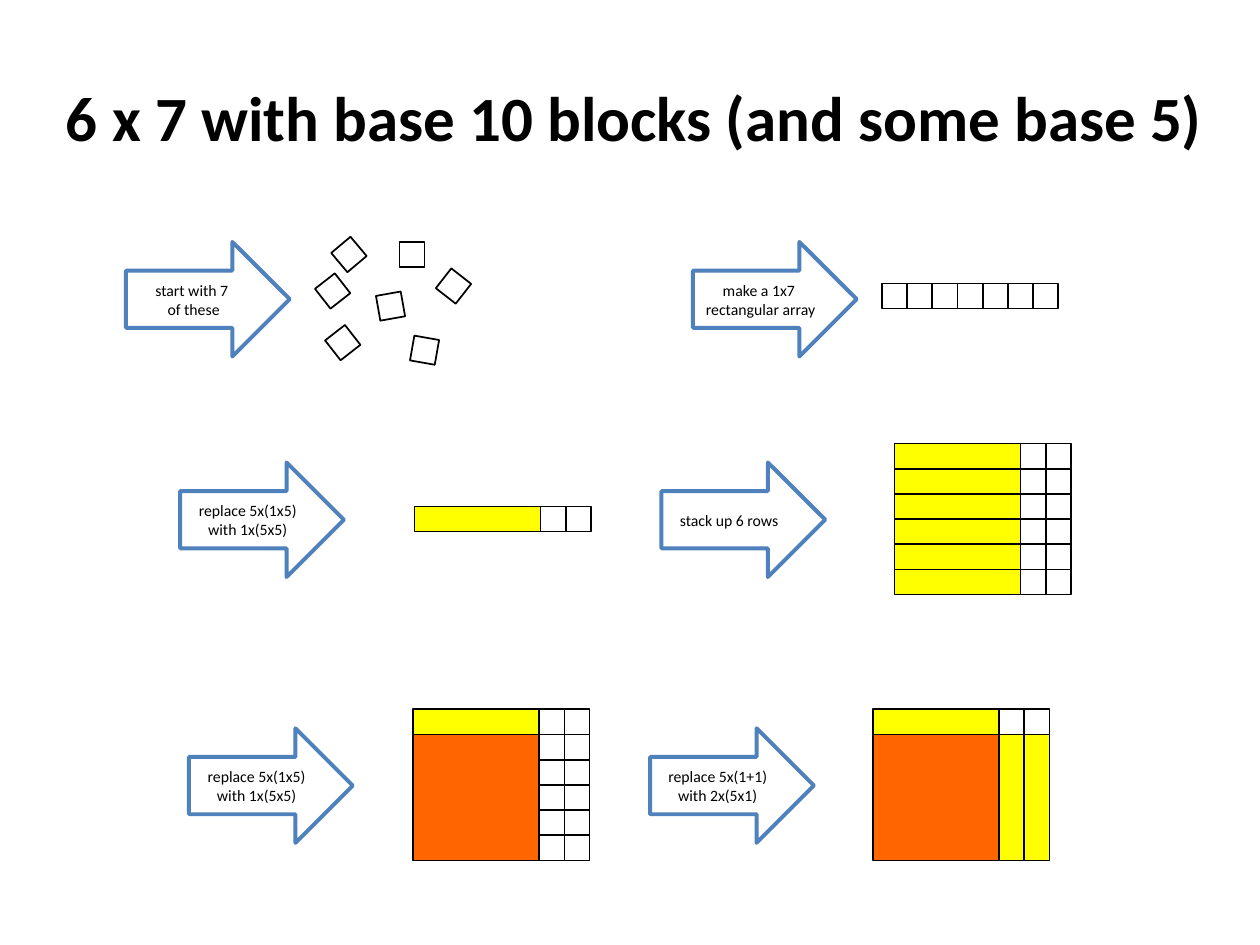
from typing import NamedTuple

from pptx import Presentation
from pptx.dml.color import RGBColor
from pptx.enum.shapes import MSO_SHAPE
from pptx.enum.text import MSO_ANCHOR, PP_ALIGN
from pptx.util import Inches, Pt

RECTANGLE = MSO_SHAPE.RECTANGLE
RIGHT_ARROW = MSO_SHAPE.RIGHT_ARROW
MIDDLE = MSO_ANCHOR.MIDDLE
CENTER = PP_ALIGN.CENTER

FONT = "Calibri"
BLACK, WHITE, YELLOW, ORANGE, BLUE = "000000", "FFFFFF", "FFFF00", "FF6600", "4F81BD"
UNIT = 0.2
BASE = 5


class Step(NamedTuple):
    left: float
    top: float
    label: str


class Tile(NamedTuple):
    left: float
    top: float
    rotation: float


class Block(NamedTuple):
    column: int
    row: int
    columns: int
    rows: int
    fill: str


class Array(NamedTuple):
    left: float
    top: float
    blocks: list[Block]


def units(column: int, row: int, columns: int, rows: int) -> list[Block]:
    """Return a grid of single white blocks."""
    return [Block(column + x, row + y, 1, 1, WHITE) for y in range(rows) for x in range(columns)]


def long_row(row: int) -> list[Block]:
    """Return one yellow row of five followed by two units."""
    return [Block(0, row, BASE, 1, YELLOW), *units(BASE, row, 2, 1)]


FLAT = Block(0, 1, BASE, BASE, ORANGE)

ARRAYS = [
    Array(7, 2.25, units(0, 0, 7, 1)),
    Array(3.29, 4.02, long_row(0)),
    Array(7.1, 3.52, [block for row in range(6) for block in long_row(row)]),
    Array(3.28, 5.63, [FLAT, *long_row(0), *units(BASE, 1, 2, BASE)]),
    Array(6.93, 5.63, [Block(BASE + x, 1, 1, BASE, YELLOW) for x in range(2)] + [FLAT, *long_row(0)]),
]

STEPS = [
    Step(1, 1.92, "start with 7 \nof these"),
    Step(5.5, 1.92, "make a 1x7 \nrectangular array"),
    Step(1.43, 3.67, "replace 5x(1x5)\nwith 1x(5x5)"),
    Step(5.25, 3.67, "stack up 6 rows"),
    Step(1.5, 5.78, "replace 5x(1x5)\nwith 1x(5x5)"),
    Step(5.16, 5.78, "replace 5x(1+1)\nwith 2x(5x1)"),
]

LOOSE_TILES = [
    Tile(3, 2.33, 350),
    Tile(2.67, 1.92, 320),
    Tile(3.17, 1.92, 0),
    Tile(3.5, 2.17, 308),
    Tile(3.27, 2.68, 10),
    Tile(2.62, 2.62, 52),
    Tile(2.54, 2.21, 52),
]


def color(value: str) -> RGBColor:
    """Turn a hex string into a colour."""
    return RGBColor.from_string(value)


def write(shape, text: str, size: float, bold: bool = False) -> None:
    """Put centred black text into a shape."""
    frame = shape.text_frame
    frame.word_wrap = True
    frame.vertical_anchor = MIDDLE
    frame.margin_left = frame.margin_right = Inches(0.05)
    paragraph = frame.paragraphs[0]
    paragraph.text = text
    paragraph.alignment = CENTER
    paragraph.font.name = FONT
    paragraph.font.size = Pt(size)
    paragraph.font.bold = bold
    paragraph.font.color.rgb = color(BLACK)


def draw_block(shapes, left: float, top: float, width: float, height: float, fill: str):
    """Draw a black-edged rectangle and return it."""
    box = shapes.add_shape(RECTANGLE, Inches(left), Inches(top), Inches(width), Inches(height))
    box.shadow.inherit = False
    box.fill.solid()
    box.fill.fore_color.rgb = color(fill)
    box.line.color.rgb = color(BLACK)
    box.line.width = Pt(1)
    return box


def draw_array(shapes, array: Array) -> None:
    """Draw the blocks of an array as one group."""
    group = shapes.add_group_shape()
    for block in array.blocks:
        draw_block(
            group.shapes,
            array.left + block.column * UNIT,
            array.top + block.row * UNIT,
            block.columns * UNIT,
            block.rows * UNIT,
            block.fill,
        )


def draw_step(shapes, step: Step) -> None:
    """Draw an outlined arrow with its instruction."""
    arrow = shapes.add_shape(RIGHT_ARROW, Inches(step.left), Inches(step.top), Inches(1.3), Inches(0.91))
    arrow.shadow.inherit = False
    arrow.fill.background()
    arrow.line.color.rgb = color(BLUE)
    arrow.line.width = Pt(2.25)
    write(arrow, step.label, 9)


def main() -> None:
    """Build the slide and save it."""
    deck = Presentation()
    deck.slide_width, deck.slide_height = Inches(10), Inches(7.5)
    page = deck.slides.add_slide(deck.slide_layouts[6])
    title = page.shapes.add_textbox(Inches(0.21), Inches(0.3), Inches(9.65), Inches(1.25))
    write(title, "6 x 7 with base 10 blocks (and some base 5)", 36, bold=True)
    for array in ARRAYS:
        draw_array(page.shapes, array)
    for step in STEPS:
        draw_step(page.shapes, step)
    for tile in LOOSE_TILES:
        draw_block(page.shapes, tile.left, tile.top, UNIT, UNIT, WHITE).rotation = tile.rotation
    deck.save("out.pptx")


if __name__ == "__main__":
    main()
